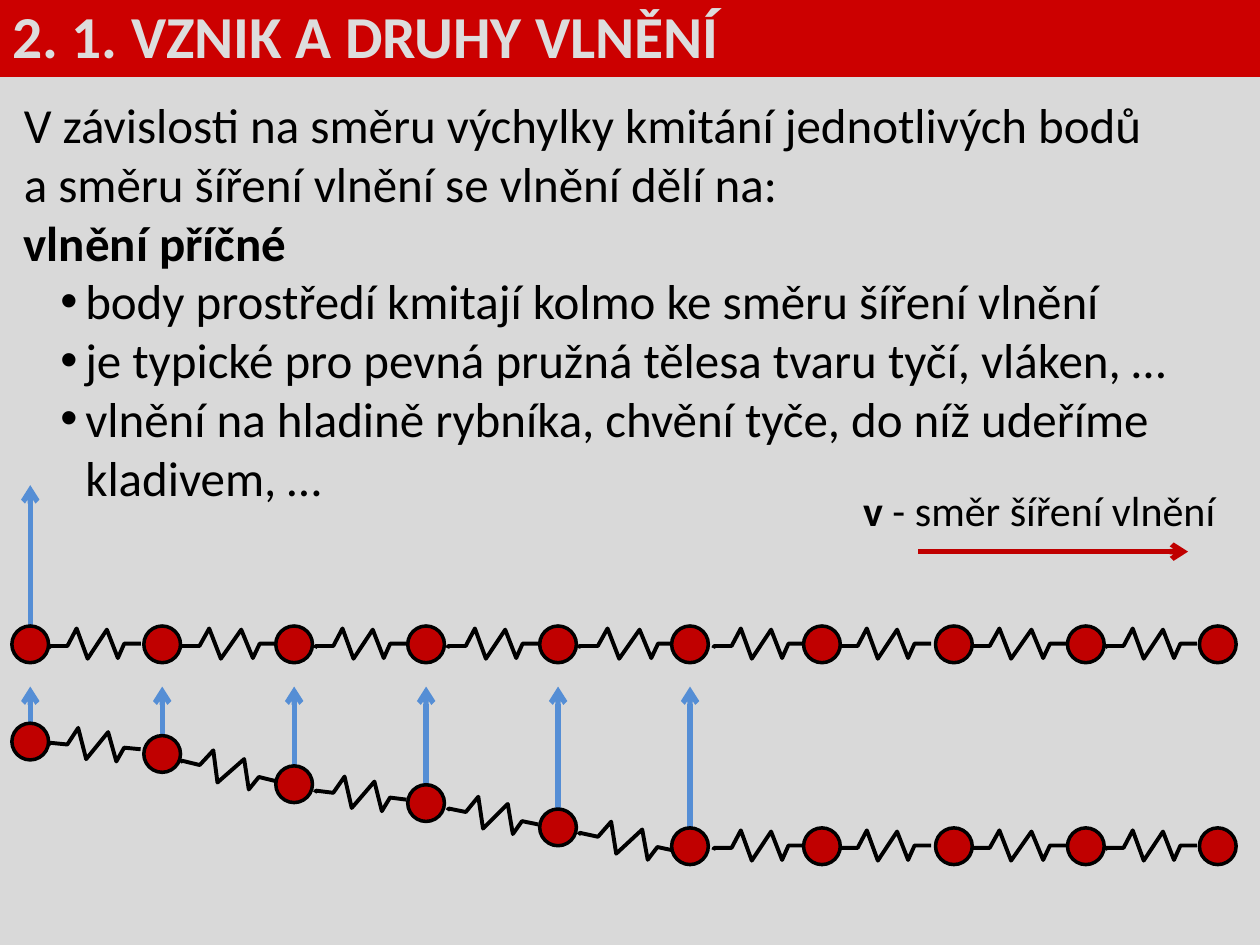
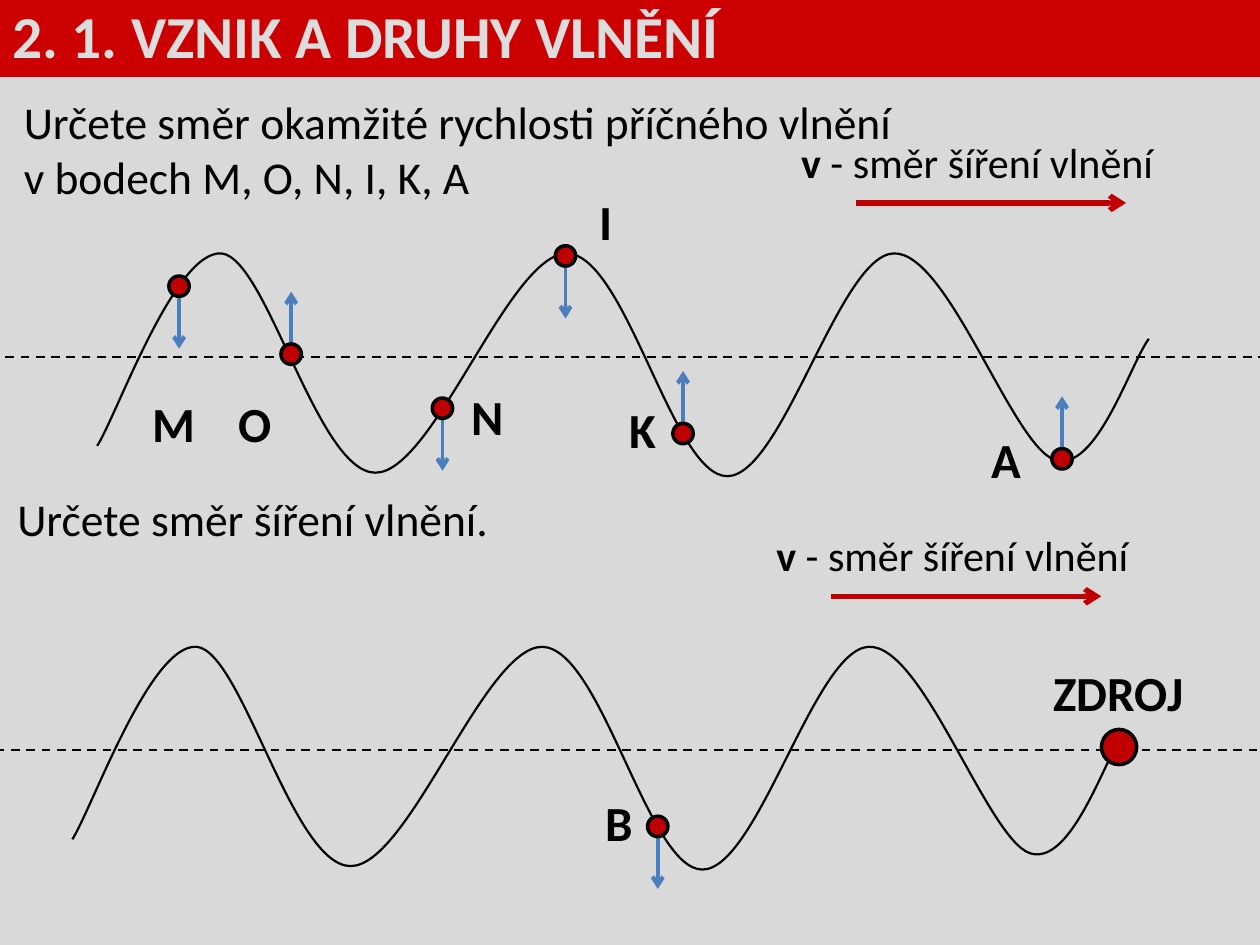
from lxml import etree
from pptx import Presentation
from pptx.dml.color import RGBColor
from pptx.enum.dml import MSO_LINE_DASH_STYLE as DASH
from pptx.enum.shapes import MSO_CONNECTOR as CONN, MSO_SHAPE as SHAPE
from pptx.enum.text import MSO_ANCHOR as ANCHOR, MSO_AUTO_SIZE as AUTO, PP_ALIGN as ALIGN
from pptx.oxml.ns import qn
from pptx.util import Cm, Pt

# Style
FONT = "Calibri"
PAPER, BAND, TITLE = "D9D9D9", "CC0000", "DDDDDD"
BLACK, RED, BLUE, DARK_BLUE = "000000", "C00000", "558ED5", "4B7EBC"
WIDTH, HEIGHT = 25.4, 19.05

# Zigzag of a spring, as fractions of its width and height
SPRING = [(0, .65), (.01, .58), (.2, .58), (.3, 0), (.42, 1),
          (.63, .04), (.75, .98), (.82, .5), (1, .5)]

# Start of the wave, then two control points and an end point per arc
WAVE = [(1.96, 8.99),
        (2.36, 8.36), (3.53, 5.03), (4.47, 5.11),
        (5.38, 5.21), (6.4, 9.53), (7.57, 9.53),
        (8.74, 9.53), (10.26, 5.11), (11.43, 5.11),
        (12.62, 5.13), (13.56, 9.6), (14.66, 9.6),
        (15.77, 9.6), (16.92, 5.16), (18.01, 5.11),
        (19.1, 5.05), (20.4, 8.97), (21.26, 9.27),
        (22.1, 9.55), (22.78, 7.34), (23.16, 6.83)]


def rgb(color):
    return RGBColor.from_string(color)


class Deck:
    """Holds the shared style and the slide being drawn."""

    def __init__(self):
        self.prs = Presentation()
        self.prs.slide_width, self.prs.slide_height = Cm(WIDTH), Cm(HEIGHT)
        self.s = None

    def new_slide(self):
        self.s = self.prs.slides.add_slide(self.prs.slide_layouts[6])
        fill = self.s.background.fill
        fill.solid()
        fill.fore_color.rgb = rgb(PAPER)

    def outline(self, sp, color, weight):
        sp.line.color.rgb = rgb(color)
        sp.line.width = Pt(weight)

    def set_text(self, p, text, size, color=BLACK, bold=False):
        p.text = text
        p.alignment = ALIGN.LEFT
        p.font.name, p.font.size, p.font.bold = FONT, Pt(size), bold
        p.font.color.rgb = rgb(color)

    def band(self, title):
        sp = self.s.shapes.add_shape(SHAPE.RECTANGLE, Cm(0), Cm(-.15), Cm(WIDTH), Cm(1.7))
        sp.shadow.inherit = False
        sp.fill.solid()
        sp.fill.fore_color.rgb = rgb(BAND)
        sp.line.fill.background()
        sp.text_frame.vertical_anchor = ANCHOR.TOP
        self.set_text(sp.text_frame.paragraphs[0], title, 34, TITLE, True)

    def text(self, x, y, w, h, lines, size, bold=False):
        tf = self.s.shapes.add_textbox(Cm(x), Cm(y), Cm(w), Cm(h)).text_frame
        tf.word_wrap = True
        tf.auto_size = AUTO.SHAPE_TO_FIT_TEXT
        for i, line in enumerate(lines):
            p = tf.add_paragraph() if i else tf.paragraphs[0]
            self.set_text(p, line, size, bold=bold)
        return tf

    def bullet(self, p):
        pr = p._p.get_or_add_pPr()
        pr.set("marL", str(Cm(1.24)))
        pr.set("indent", str(Cm(-.5)))
        mark = etree.Element(qn("a:buChar"), char="•")
        pr.insert(0, mark)  # bullets come before the default run properties
        mark.addprevious(etree.Element(qn("a:buFont"), typeface="Arial"))

    def line(self, x1, y1, x2, y2, color, weight, arrow=True, dashed=False):
        c = self.s.shapes.add_connector(CONN.STRAIGHT, Cm(x1), Cm(y1), Cm(x2), Cm(y2))
        self.outline(c, color, weight)
        if dashed:
            c.line.dash_style = DASH.DASH
        pr = c._element.spPr
        if arrow:
            etree.SubElement(pr.find(qn("a:ln")), qn("a:tailEnd"), type="arrow")
        etree.SubElement(pr, qn("a:effectLst"))

    def ball(self, cx, cy, d):
        sp = self.s.shapes.add_shape(
            SHAPE.OVAL, Cm(cx - d / 2), Cm(cy - d / 2), Cm(d), Cm(d))
        sp.shadow.inherit = False
        sp.fill.solid()
        sp.fill.fore_color.rgb = rgb(RED)
        self.outline(sp, BLACK, 2)

    def freeform(self, points, weight):
        start, *rest = [(Cm(x), Cm(y)) for x, y in points]
        builder = self.s.shapes.build_freeform(*start)
        builder.add_line_segments(rest, close=False)
        sp = builder.convert_to_shape()
        sp.shadow.inherit = False
        sp.fill.background()
        self.outline(sp, BLACK, weight)
        return sp

    def spring(self, x, y, w, angle=0):
        sp = self.freeform([(x + fx * w, y + fy * .61) for fx, fy in SPRING], 2.25)
        sp.rotation = angle

    def wave(self, dx=0, dy=0):
        """Wave with its dashed axis and direction label."""
        sp = self.freeform([(x + dx, y + dy) for x, y in WAVE], 1.25)
        # Turn every three straight segments into one Bézier arc
        segments = list(sp._element.iter(qn("a:lnTo")))
        for i in range(0, len(segments), 3):
            arc = etree.Element(qn("a:cubicBezTo"))
            segments[i].addprevious(arc)
            for segment in segments[i:i + 3]:
                arc.append(segment[0])
                segment.getparent().remove(segment)
        self.line(dx - .51, 7.19 + dy, dx + 26.04, 7.19 + dy, BLACK, 1.25,
                  arrow=False, dashed=True)
        self.direction(15.9 + dx, 2.62 + dy)

    def direction(self, x, y):
        self.line(x + 1.36, y + 1.47, x + 6.8, y + 1.47, RED, 3)
        p = self.text(x, y, 9.5, 1.27, [""], 24).paragraphs[0]
        for part, bold in (("v", True), (" - směr šíření vlnění", False)):
            r = p.add_run()
            r.text, r.font.bold = part, bold

    def point(self, name, cx, cy, way, label_x, label_y):
        """Point on a wave; way is 1 for velocity down, -1 for up."""
        self.line(cx, cy + way * .18, cx, cy + way * 1.26, DARK_BLUE, 2.25)
        self.ball(cx, cy, .41)
        self.text(label_x, label_y, 1.12, 1.45, [name], 28, True)


HEADING = "2. 1. VZNIK A DRUHY VLNĚNÍ"


def transverse_slide(deck):
    deck.new_slide()
    ball_x = [.61 + 2.66 * i for i in range(10)]
    spring_x = [group + step for group in (.99, 9.02, 16.92) for step in (0, 2.64, 5.36)]
    spring_w = [1.85, 1.96, 1.85] * 3
    rest_y = 12.99
    displaced_y = [14.95, 15.2, 15.81, 16.19, 16.68] + [17.06] * 5
    displaced_springs = [(14.71, 5.6), (15.21, 13.7), (15.7, 7.2),
                         (16.13, 11.6), (16.64, 12.1)] + [(16.74, 0)] * 4

    # Displacement arrows, behind the balls
    for x, y in zip(ball_x[:6], displaced_y):
        deck.line(x, y + .25, x, 13.84, BLUE, 3)
    deck.line(ball_x[0], rest_y + .25, ball_x[0], 9.78, BLUE, 3)

    # Text
    tf = deck.text(.23, 1.78, 25.17, 9.83, [
        "V závislosti na směru výchylky kmitání jednotlivých bodů",
        "a směru šíření vlnění se vlnění dělí na:",
        "vlnění příčné",
        "body prostředí kmitají kolmo ke směru šíření vlnění",
        "je typické pro pevná pružná tělesa tvaru tyčí, vláken, …",
        "vlnění na hladině rybníka, chvění tyče, do níž udeříme kladivem, …"], 28)
    tf.paragraphs[2].font.bold = True
    for p in tf.paragraphs[3:]:
        deck.bullet(p)
    deck.band(HEADING)

    # Chain at rest and displaced chain
    chains = (([rest_y] * 10, [(12.67, 0)] * 9), (displaced_y, displaced_springs))
    for balls, springs in chains:
        for x, w, (y, angle) in zip(spring_x, spring_w, springs):
            deck.spring(x, y, w, angle)
        for x, y in zip(ball_x, balls):
            deck.ball(x, y, .74)
    deck.direction(17.15, 9.65)


def exercise_slide(deck):
    deck.new_slide()
    deck.text(.23, 1.78, 25.81, 2.49,
              ["Určete směr okamžité rychlosti příčného vlnění\nv bodech M, O, N, I, K, A"], 26)
    deck.band(HEADING)

    # Velocity at the points of the first wave
    deck.wave()
    for point in (("M", 3.61, 5.77, 1, 2.82, 7.8),
                  ("O", 5.87, 7.14, -1, 4.55, 7.8),
                  ("N", 8.92, 8.23, 1, 9.25, 7.67),
                  ("I", 11.4, 5.16, 1, 11.84, 3.73),
                  ("K", 13.77, 8.74, -1, 12.45, 7.92),
                  ("A", 21.41, 9.25, -1, 19.74, 8.53)):
        deck.point(*point)

    # Direction of the second wave
    deck.text(.1, 9.78, 25.81, 1.37, ["Určete směr šíření vlnění."], 26)
    deck.wave(-.5, 7.93)
    deck.point("B", 13.26, 16.66, 1, 11.96, 15.85)
    deck.ball(22.56, 15.06, .71)
    deck.text(20.98, 13.23, 3.33, 1.45, ["ZDROJ"], 28, True)


def main():
    deck = Deck()
    transverse_slide(deck)
    exercise_slide(deck)
    deck.prs.save("out.pptx")


if __name__ == "__main__":
    main()
